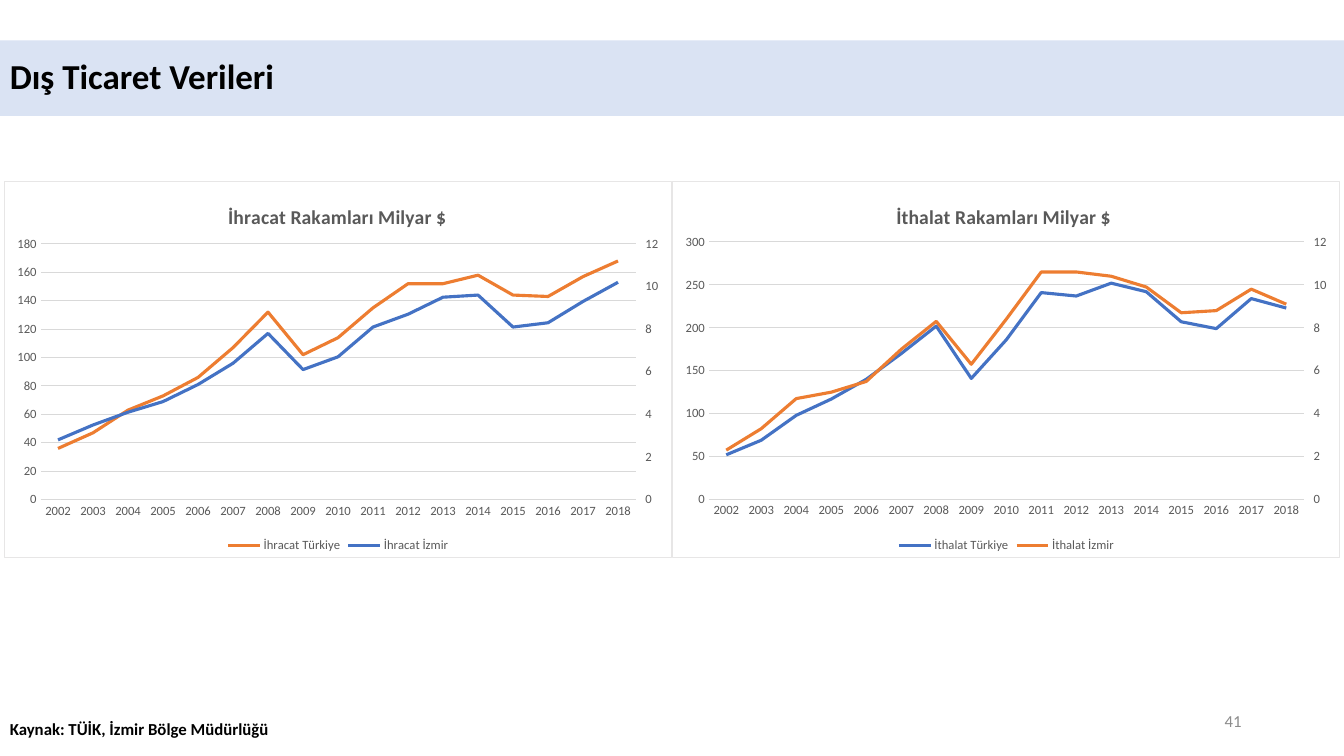
from copy import deepcopy

from lxml import etree
from pptx import Presentation
from pptx.chart.data import CategoryChartData
from pptx.dml.color import RGBColor
from pptx.enum import chart as ch, shapes, text
from pptx.oxml import parse_xml
from pptx.oxml.ns import nsdecls, qn
from pptx import util as u

COLORS = {
    "black": "000000", "band": "DAE3F3", "gray": "595959", "number": "8C8C8C",
    "grid": "D9D9D9", "border": "E7E6E6", "blue": "4472C4", "orange": "ED7D31",
}
YEARS = [str(year) for year in range(2002, 2019)]


class SlideBuilder:
    font = "Calibri"

    def __init__(self, prs):
        self.s = prs.slides.add_slide(prs.slide_layouts[6])

    def color(self, name):
        return RGBColor.from_string(COLORS[name])

    def style(self, font, size, color, bold=False):
        font.name, font.size, font.bold = self.font, u.Pt(size), bold
        font.color.rgb = self.color(color)

    def put_text(self, sp, words, size, color, bold, align):
        tf = sp.text_frame
        tf.word_wrap = True
        tf.vertical_anchor = text.MSO_ANCHOR.MIDDLE
        p = tf.paragraphs[0]
        p.text, p.alignment = words, align
        self.style(p.font, size, color, bold)
        return p

    def band(self, words, box):
        sp = self.s.shapes.add_shape(shapes.MSO_SHAPE.RECTANGLE, *map(u.Cm, box))
        sp.shadow.inherit = False
        sp.fill.solid()
        sp.fill.fore_color.rgb = self.color("band")
        sp.line.fill.background()
        p = self.put_text(sp, words, 25, "black", True, text.PP_ALIGN.LEFT)
        p.line_spacing = 0.9

    def label(self, words, box, color, bold=False, align=text.PP_ALIGN.LEFT):
        sp = self.s.shapes.add_textbox(*map(u.Cm, box))
        self.put_text(sp, words, 12, color, bold, align)

    def set_layout(self, parent, index, target="", **place):
        """Place a chart part by fractions of the chart's size."""
        for old in parent.findall(qn("c:layout")):
            parent.remove(old)
        items = "".join(f'<c:{k} val="{v}"/>' for k, v in place.items())
        modes = '<c:xMode val="edge"/><c:yMode val="edge"/>'
        parent.insert(index, parse_xml(
            f'<c:layout {nsdecls("c")}><c:manualLayout>{target}{modes}'
            f'{items}</c:manualLayout></c:layout>'))

    def line_chart(self, title, box, series, top, step, plot_top):
        data = CategoryChartData()
        data.categories = YEARS
        for name, _, values in series:
            data.add_series(name, values)
        chart = self.s.shapes.add_chart(
            ch.XL_CHART_TYPE.LINE, *map(u.Cm, box), data).chart
        self.style(chart.font, 10, "black")

        # Title and legend
        p = chart.chart_title.text_frame.paragraphs[0]
        p.text = title
        self.style(p.font, 14, "gray", True)
        title_xml = chart._chartSpace.chart.find(qn("c:title"))
        self.set_layout(title_xml, 1, x=0.33, y=0.05)
        chart.has_legend = True
        chart.legend.position = ch.XL_LEGEND_POSITION.BOTTOM
        chart.legend.include_in_layout = False
        self.style(chart.legend.font, 9, "gray")

        # Series
        chart.plots[0].vary_by_categories = False
        for ser, (_, color, _) in zip(chart.plots[0].series, series):
            ser.smooth = False
            ser.marker.style = ch.XL_MARKER_STYLE.NONE
            ser.format.line.color.rgb = self.color(color)
            ser.format.line.width = u.Pt(2.25)

        # Axes
        cat, val = chart.category_axis, chart.value_axis
        for axis in (cat, val):
            axis.major_tick_mark = axis.minor_tick_mark = ch.XL_TICK_MARK.NONE
            self.style(axis.tick_labels.font, 9, "gray")
        val.minimum_scale, val.maximum_scale, val.major_unit = 0, top, step
        val.tick_labels.number_format = "0"
        val.tick_labels.number_format_is_linked = False
        val.format.line.fill.background()
        for line in (val.major_gridlines.format.line, cat.format.line):
            line.color.rgb = self.color("grid")
            line.width = u.Pt(0.75)
        self.second_axis(chart)

        # Plot area and frame
        width, height = box[2:]
        self.set_layout(chart._chartSpace.chart.plotArea, 0,
                        '<c:layoutTarget val="inner"/>',
                        x=0.91 / width, y=plot_top / height,
                        w=15.02 / width, h=(8.05 - plot_top) / height)
        self.frame(chart)

    def second_axis(self, chart):
        """Move the last series to its own plot with an axis on the right."""
        area = chart._chartSpace.chart.plotArea
        left, cat, val = (area.find(qn(f"c:{tag}"))
                          for tag in ("lineChart", "catAx", "valAx"))
        right, cat2, val2 = map(deepcopy, (left, cat, val))
        left.remove(left.findall(qn("c:ser"))[1])
        right.remove(right.findall(qn("c:ser"))[0])
        left.addnext(right)
        val.addnext(val2)
        val2.addnext(cat2)
        ids = {cat.find(qn("c:axId")).get("val"): "5001",
               val.find(qn("c:axId")).get("val"): "5002"}
        for part in (right, cat2, val2):
            for node in part.iter(qn("c:axId"), qn("c:crossAx")):
                node.set("val", ids[node.get("val")])
        val2.remove(val2.find(qn("c:majorGridlines")))
        cat2.find(qn("c:delete")).set("val", "1")
        for tag, value in (("axPos", "r"), ("majorTickMark", "out"),
                           ("crosses", "max"), ("majorUnit", "2"),
                           ("scaling/c:max", "12")):
            val2.find("c:" + tag, {"c": etree.QName(val2).namespace}).set("val", value)

    def frame(self, chart):
        chart._chartSpace.chart.addnext(parse_xml(
            f'<c:spPr {nsdecls("c", "a")}><a:noFill/><a:ln w="9525"><a:solidFill>'
            f'<a:srgbClr val="{COLORS["border"]}"/></a:solidFill></a:ln></c:spPr>'))


def main():
    prs = Presentation()
    prs.slide_width, prs.slide_height = u.Cm(33.87), u.Cm(19.05)
    b = SlideBuilder(prs)

    # Heading and source
    b.band("Dış Ticaret Verileri", (0, 1.02, 33.87, 1.9))
    b.label("Kaynak: TÜİK, İzmir Bölge Müdürlüğü", (0, 17.98, 8.1, 0.77), "black", True)

    # Imports on the right, exports on the left
    left, top, width, height = 0.1, 4.55, 16.84, 9.5
    b.line_chart("İthalat Rakamları Milyar $", (left + width, top, width, height), [
        ("İthalat Türkiye", "blue", [52, 69, 98, 117, 140, 170, 202, 141, 186, 241,
                                     237, 252, 242, 207, 199, 234, 223]),
        ("İthalat İzmir", "orange", [2.3, 3.3, 4.7, 5, 5.5, 7, 8.3, 6.3, 8.4, 10.6,
                                     10.6, 10.4, 9.9, 8.7, 8.8, 9.8, 9.1]),
    ], 300, 50, 1.54)
    b.line_chart("İhracat Rakamları Milyar $", (left, top, width, height), [
        ("İhracat Türkiye", "orange", [36, 47, 63, 73, 86, 107, 132, 102, 114, 135,
                                       152, 152, 158, 144, 143, 157, 168]),
        ("İhracat İzmir", "blue", [2.8, 3.5, 4.1, 4.6, 5.4, 6.4, 7.8, 6.1, 6.7, 8.1,
                                   8.7, 9.5, 9.6, 8.1, 8.3, 9.3, 10.2]),
    ], 180, 20, 1.59)

    # Slide number
    b.label("41", (23.92, 17.66, 7.62, 1.01), "number", align=text.PP_ALIGN.RIGHT)
    prs.save("out.pptx")


if __name__ == "__main__":
    main()
